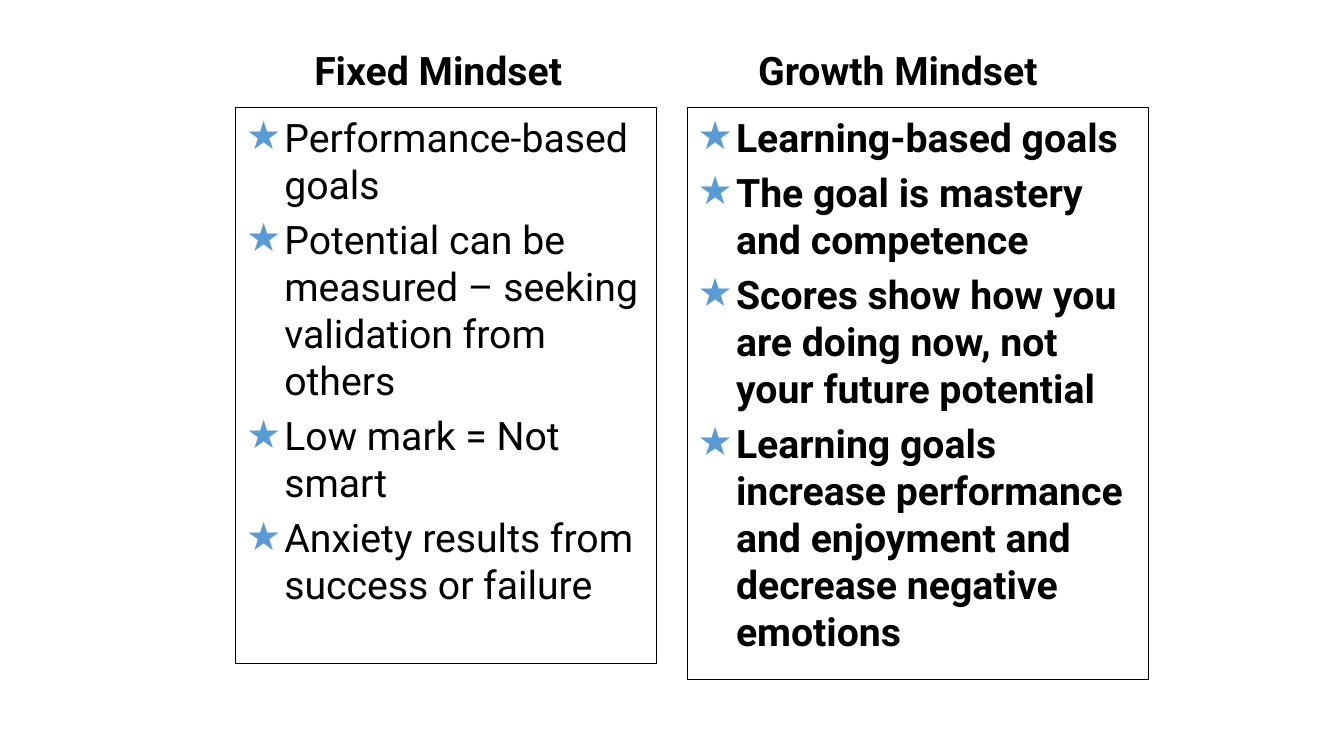
from lxml import etree
from pptx import Presentation
from pptx.dml.color import RGBColor
from pptx.enum.text import MSO_ANCHOR, MSO_AUTO_SIZE, PP_ALIGN
from pptx.oxml.ns import qn
from pptx.util import Inches, Pt

BLACK = RGBColor(0x00, 0x00, 0x00)
STAR_BLUE = RGBColor(0x5B, 0x9B, 0xD5)
FONT = "Roboto"
TEXT_SIZE = Pt(28)
STAR_INDENT = Inches(0.38)
HEADING_TOP, HEADING_WIDTH, HEADING_HEIGHT = 0.28, 4.17, 0.7
LIST_TOP = 1.07

FIXED_POINTS = [
    "Performance-based goals",
    "Potential can be measured – seeking validation from others",
    "Low mark = Not smart",
    "Anxiety results from success or failure",
]
GROWTH_POINTS = [
    "Learning-based goals",
    "The goal is mastery and competence",
    "Scores show how you are doing now, not your future potential",
    "Learning goals increase performance and enjoyment and decrease negative emotions",
]


def place(box, left, top, width, height, anchor):
    box.left, box.top = Inches(left), Inches(top)
    box.width, box.height = Inches(width), Inches(height)
    frame = box.text_frame
    frame.word_wrap = True
    frame.auto_size = MSO_AUTO_SIZE.NONE
    frame.vertical_anchor = anchor
    frame.margin_left = frame.margin_right = Inches(0.1)
    frame.margin_top = frame.margin_bottom = Inches(0.05)


def format_text(para, bold):
    for span in para.runs:
        span.font.name = FONT
        span.font.size = TEXT_SIZE
        span.font.bold = bold
        span.font.color.rgb = BLACK


def add_star(para):
    properties = para._p.get_or_add_pPr()
    properties.set("marL", str(STAR_INDENT))
    properties.set("indent", str(-STAR_INDENT))
    color = etree.SubElement(properties, qn("a:buClr"))
    etree.SubElement(color, qn("a:srgbClr")).set("val", str(STAR_BLUE))
    etree.SubElement(properties, qn("a:buChar")).set("char", "★")


def fill_heading(box, text, left):
    place(box, left, HEADING_TOP, HEADING_WIDTH, HEADING_HEIGHT, MSO_ANCHOR.BOTTOM)
    box.text_frame.text = text
    para = box.text_frame.paragraphs[0]
    para.alignment = PP_ALIGN.CENTER
    para.space_before = Pt(0)
    format_text(para, bold=True)


def fill_list(box, points, left, width, height, bold):
    place(box, left, LIST_TOP, width, height, MSO_ANCHOR.TOP)
    box.line.color.rgb = BLACK
    box.line.width = Pt(0.75)
    box.text_frame.text = "\n".join(points)
    for index, para in enumerate(box.text_frame.paragraphs):
        add_star(para)
        para.space_before = Pt(5.6 if index else 0)
        format_text(para, bold)


def main():
    deck = Presentation()
    deck.slide_width, deck.slide_height = Inches(13.33), Inches(7.5)

    # Comparison layout without its title
    page = deck.slides.add_slide(deck.slide_layouts[4])
    title = page.shapes.title.element
    title.getparent().remove(title)
    fixed_heading, fixed_list, growth_heading, growth_list = page.placeholders

    # Fixed mindset column
    fill_heading(fixed_heading, "Fixed Mindset", left=2.26)
    fill_list(fixed_list, FIXED_POINTS, left=2.34, width=4.17, height=5.51, bold=False)

    # Growth mindset column
    fill_heading(growth_heading, "Growth Mindset", left=6.82)
    fill_list(growth_list, GROWTH_POINTS, left=6.82, width=4.57, height=5.67, bold=True)

    deck.save("out.pptx")


if __name__ == "__main__":
    main()
